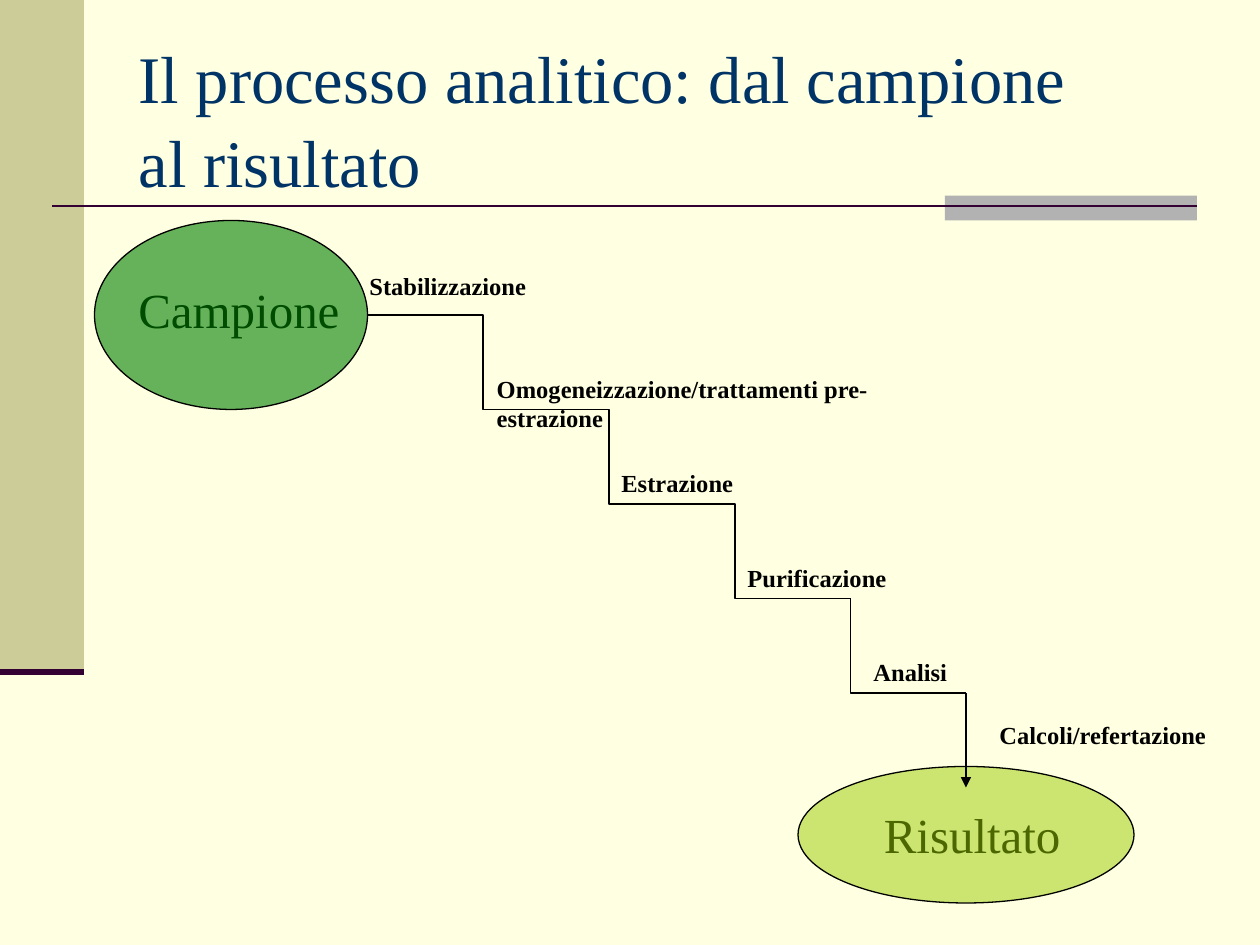
"""Builds the slide on the analytical process, from sample to result."""
from lxml.etree import SubElement
from pptx import Presentation
from pptx.dml.color import RGBColor
from pptx.enum.shapes import MSO_CONNECTOR, MSO_SHAPE
from pptx.enum.text import MSO_ANCHOR, MSO_AUTO_SIZE, PP_ALIGN
from pptx.oxml.ns import qn
from pptx.util import Pt

PX = 9525
THEME = {
    "font": "Times New Roman",
    "background": RGBColor.from_string("FFFFE1"),
    "band": RGBColor.from_string("CCCC99"),
    "accent": RGBColor.from_string("B2B2B2"),
    "rule": RGBColor.from_string("330033"),
    "title": RGBColor.from_string("003366"),
    "ink": RGBColor.from_string("000000"),
    "sample": RGBColor.from_string("008000"),
    "result": RGBColor.from_string("99CC00"),
    "title_size": Pt(38),
    "node_size": Pt(28),
    "step_size": Pt(14),
    "outline": Pt(0.75),
}

presentation = Presentation()
presentation.slide_width = 960 * PX
presentation.slide_height = 720 * PX
slide = presentation.slides.add_slide(presentation.slide_layouts[5])
slide.background.fill.solid()
slide.background.fill.fore_color.rgb = THEME["background"]


def add_line(kind, start_x, start_y, end_x, end_y, color, width):
    connector = slide.shapes.add_connector(
        kind, start_x * PX, start_y * PX, end_x * PX, end_y * PX
    )
    connector.line.color.rgb = color
    connector.line.width = width
    SubElement(connector._element.spPr, qn("a:effectLst"))
    return connector


def add_label(text, left, top, width, height, size, bold):
    box = slide.shapes.add_textbox(left * PX, top * PX, width * PX, height * PX)
    box.text_frame.text = text
    box.text_frame.word_wrap = True
    font = box.text_frame.paragraphs[0].runs[0].font
    font.name = THEME["font"]
    font.size = size
    font.bold = bold
    font.color.rgb = THEME["ink"]


for left, top, width, height, color in [
    (0, 0, 64, 512, THEME["band"]),
    (720, 149, 192, 19, THEME["accent"]),
]:
    block = slide.shapes.add_shape(
        MSO_SHAPE.RECTANGLE, left * PX, top * PX, width * PX, height * PX
    )
    block.shadow.inherit = False
    block.fill.solid()
    block.fill.fore_color.rgb = color
    block.line.fill.background()

add_line(MSO_CONNECTOR.STRAIGHT, 40, 157, 912, 157, THEME["rule"], Pt(1.5))
add_line(MSO_CONNECTOR.STRAIGHT, 0, 512, 64, 512, THEME["rule"], Pt(3.5))

title = slide.shapes.title
title.left, title.top, title.width, title.height = 96 * PX, 29 * PX, 816 * PX, 120 * PX
title.text_frame.text = "Il processo analitico: dal campione\val risultato"
title.text_frame.auto_size = MSO_AUTO_SIZE.NONE
title.text_frame.vertical_anchor = MSO_ANCHOR.MIDDLE
heading = title.text_frame.paragraphs[0]
heading.alignment = PP_ALIGN.LEFT
heading.line_spacing = 1.05
for run in heading.runs:
    run.font.name = THEME["font"]
    run.font.size = THEME["title_size"]
    run.font.color.rgb = THEME["title"]

add_label("Campione", 96, 208, 181, 55, THEME["node_size"], False)
add_label("Risultato", 664, 608, 154, 55, THEME["node_size"], False)

for left, top, width, height, color, opacity in [
    (608, 584, 256, 104, THEME["result"], 50),
    (72, 168, 208, 144, THEME["sample"], 60),
]:
    ellipse = slide.shapes.add_shape(
        MSO_SHAPE.OVAL, left * PX, top * PX, width * PX, height * PX
    )
    ellipse.shadow.inherit = False
    ellipse.fill.solid()
    ellipse.fill.fore_color.rgb = color
    fill_color = ellipse._element.spPr.find(qn("a:solidFill")).find(qn("a:srgbClr"))
    SubElement(fill_color, qn("a:alpha"), val=str(opacity * 1000))
    ellipse.line.color.rgb = THEME["ink"]
    ellipse.line.width = THEME["outline"]

for index, left in enumerate([280, 376, 472, 560]):
    top = 240 + 72 * index
    add_line(MSO_CONNECTOR.ELBOW, left, top, left + 176, top + 72,
             THEME["ink"], THEME["outline"])

arrow = add_line(MSO_CONNECTOR.STRAIGHT, 736, 528, 736, 600,
                 THEME["ink"], THEME["outline"])
SubElement(arrow.line._get_or_add_ln(), qn("a:tailEnd"), type="triangle")

for text, left, top, width in [
    ("Stabilizzazione", 272, 202, 142),
    ("Omogeneizzazione/trattamenti pre-estrazione", 369, 280, 368),
    ("Estrazione", 464, 352, 114),
    ("Purificazione", 560, 424, 138),
    ("Analisi", 656, 496, 84),
    ("Calcoli/refertazione", 752, 544, 186),
]:
    add_label(text, left, top, width, 32, THEME["step_size"], True)

presentation.save("out.pptx")
